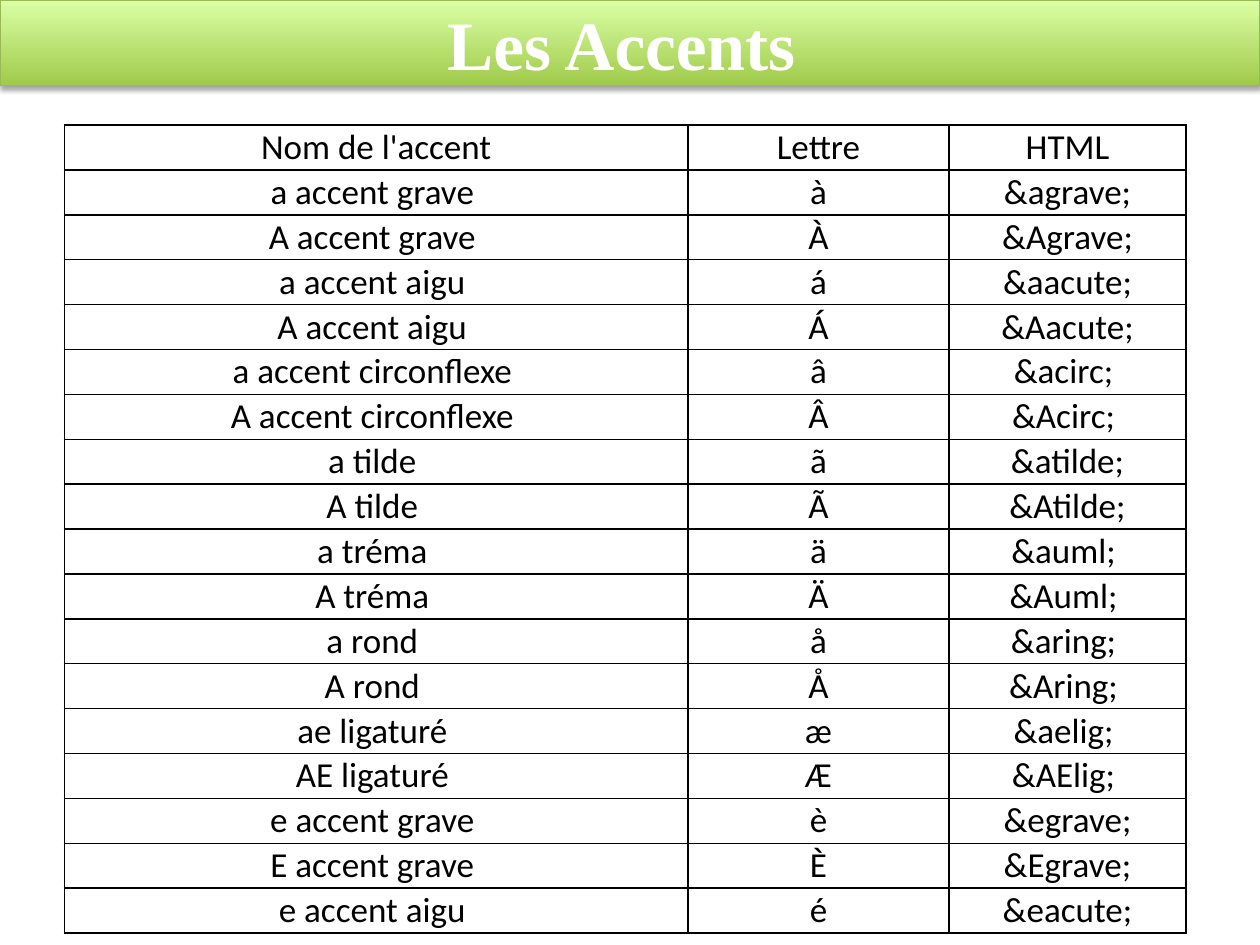
from lxml import etree
from pptx import Presentation
from pptx import util as u
from pptx.dml.color import RGBColor
from pptx.enum import text
from pptx.oxml import parse_xml
from pptx.oxml.ns import nsdecls, qn

COLORS = {
    "light_green": "DAFFA5",
    "green": "A0CA4A",
    "outline": "98B955",
    "white": "FFFFFF",
    "black": "000000",
}
ROWS = [
    ("Nom de l'accent", "Lettre", "HTML"),
    ("a accent grave ", "à", "&agrave;"),
    ("A accent grave ", "À", "&Agrave;"),
    ("a accent aigu ", "á", "&aacute;"),
    ("A accent aigu ", "Á", "&Aacute;"),
    ("a accent circonflexe ", "â", "&acirc; "),
    ("A accent circonflexe ", "Â", "&Acirc; "),
    ("a tilde ", "ã", "&atilde;"),
    ("A tilde ", "Ã", "&Atilde;"),
    ("a tréma ", "ä", "&auml; "),
    ("A tréma ", "Ä", "&Auml; "),
    ("a rond ", "å", "&aring; "),
    ("A rond ", "Å", "&Aring; "),
    ("ae ligaturé ", "æ", "&aelig; "),
    ("AE ligaturé ", "Æ", "&AElig; "),
    ("e accent grave ", "è", "&egrave;"),
    ("E accent grave ", "È", "&Egrave;"),
    ("e accent aigu ", "é", "&eacute;"),
]
COLUMN_WIDTHS = [u.Cm(12.57), u.Cm(5.26), u.Cm(4.78)]
TABLE_HEIGHT = u.Cm(16.15)


def format_paragraph(paragraph, font_name, size, color, bold):
    paragraph.alignment = text.PP_ALIGN.CENTER
    paragraph.font.name = font_name
    paragraph.font.size = u.Pt(size)
    paragraph.font.bold = bold
    paragraph.font.color.rgb = RGBColor.from_string(COLORS[color])


def add_borders(cell, color, width):
    properties = cell._tc.get_or_add_tcPr()
    for side in ("lnL", "lnR", "lnT", "lnB"):
        line = etree.SubElement(properties, qn(f"a:{side}"), w=str(u.Pt(width)))
        fill = etree.SubElement(line, qn("a:solidFill"))
        etree.SubElement(fill, qn("a:srgbClr"), val=COLORS[color])


presentation = Presentation()
presentation.slide_width = u.Cm(25.4)
presentation.slide_height = u.Cm(19.05)
slide = presentation.slides.add_slide(presentation.slide_layouts[5])

title = slide.shapes.title
title.left, title.top = u.Cm(0), u.Cm(0)
title.width, title.height = presentation.slide_width, u.Cm(1.73)
title.fill.gradient()
title.fill.gradient_angle = 90
for stop, color in zip(title.fill.gradient_stops, ("green", "light_green")):
    stop.color.rgb = RGBColor.from_string(COLORS[color])
title.line.color.rgb = RGBColor.from_string(COLORS["outline"])
title.line.width = u.Pt(0.75)
title._element.spPr.append(parse_xml(
    f'<a:effectLst {nsdecls("a")}>'
    f'<a:outerShdw blurRad="{u.Pt(3.1)}" dist="{u.Pt(1.8)}" dir="5400000" rotWithShape="0">'
    f'<a:srgbClr val="{COLORS["black"]}"><a:alpha val="35000"/></a:srgbClr>'
    '</a:outerShdw></a:effectLst>'
))
title.text_frame.text = "Les Accents "
title.text_frame.auto_size = text.MSO_AUTO_SIZE.NONE
title.text_frame.vertical_anchor = text.MSO_ANCHOR.MIDDLE
format_paragraph(title.text_frame.paragraphs[0], "Times New Roman", 39.6, "white", True)

table = slide.shapes.add_table(
    len(ROWS), len(COLUMN_WIDTHS), u.Cm(1.3), u.Cm(2.52), sum(COLUMN_WIDTHS), TABLE_HEIGHT
).table
table.first_row = False
table.horz_banding = False
for column, width in zip(table.columns, COLUMN_WIDTHS):
    column.width = width
for row, values in zip(table.rows, ROWS):
    row.height = TABLE_HEIGHT // len(ROWS)
    for cell, value in zip(row.cells, values):
        cell.text = value
        cell.vertical_anchor = text.MSO_ANCHOR.MIDDLE
        cell.margin_left = cell.margin_right = u.Cm(0.02)
        cell.margin_top = cell.margin_bottom = u.Cm(0.02)
        add_borders(cell, "black", 1)
        cell.fill.background()
        format_paragraph(cell.text_frame.paragraphs[0], "Calibri", 20, "black", False)

presentation.save("out.pptx")
